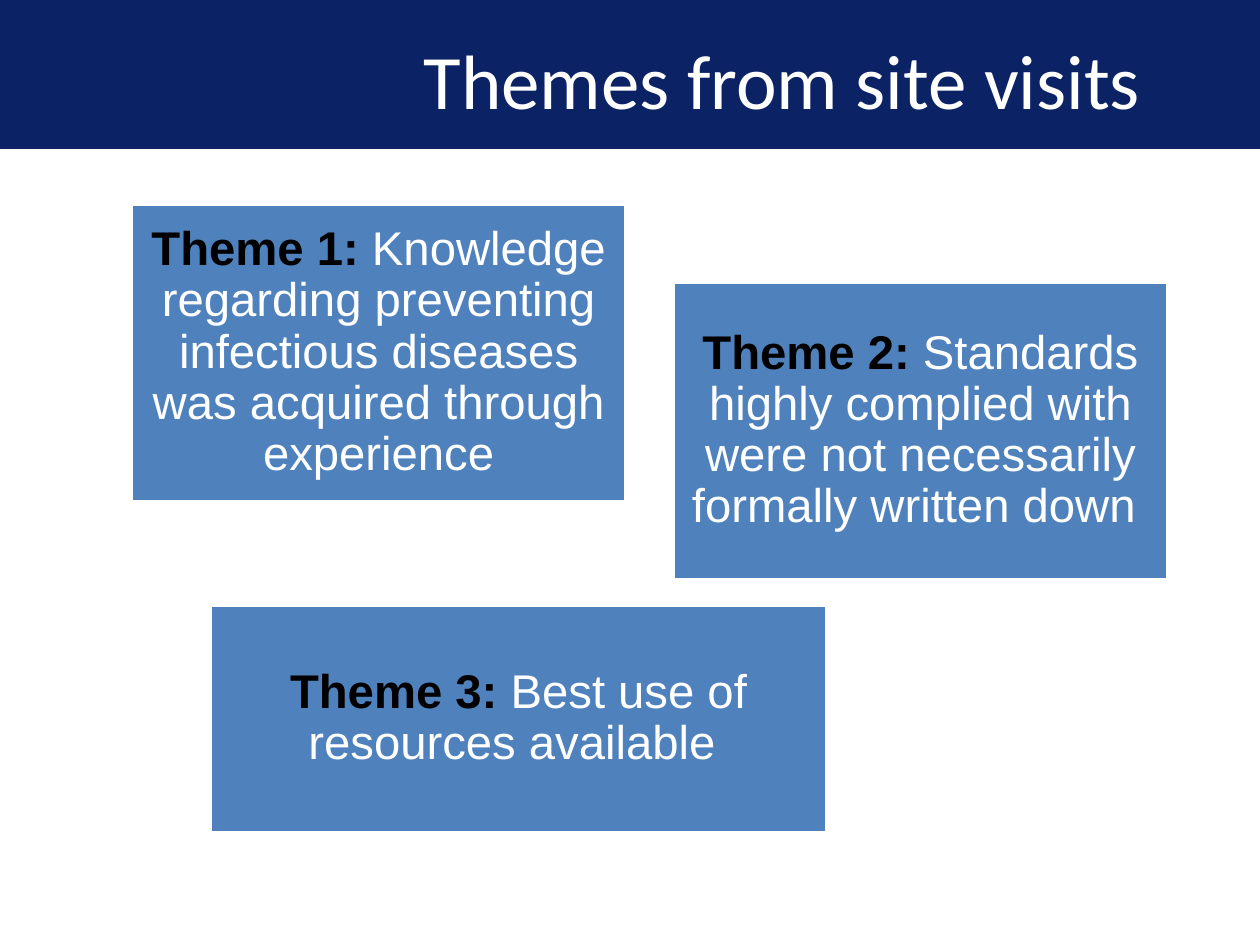
from dataclasses import dataclass

from pptx import Presentation
from pptx.dml.color import RGBColor
from pptx.enum.shapes import MSO_SHAPE
from pptx.enum.text import MSO_ANCHOR, PP_ALIGN
from pptx.util import Inches, Pt

TITLE = "Themes from site visits"
THEMES = [
    ("Theme 1: ", "Knowledge regarding preventing infectious diseases was acquired through experience",
     (1.04, 1.62, 3.93, 2.36)),
    ("Theme 2: ", "Standards highly complied with were not necessarily formally written down ",
     (5.34, 2.24, 3.93, 2.36)),
    ("Theme 3: ", "Best use of resources available ",
     (1.67, 4.8, 4.89, 1.81)),
]


@dataclass(frozen=True)
class Theme:
    navy: str = "0B2265"
    blue: str = "4F81BD"
    white: str = "FFFFFF"
    black: str = "000000"
    title_font: str = "Calibri"
    body_font: str = "Arial"
    title_size: int = 44
    body_size: int = 27
    line_width: int = 2


THEME = Theme()


def add_panel(page, bounds, fill, line):
    panel = page.shapes.add_shape(MSO_SHAPE.RECTANGLE, *map(Inches, bounds))
    panel.shadow.inherit = False
    panel.fill.solid()
    panel.fill.fore_color.rgb = RGBColor.from_string(fill)
    panel.line.color.rgb = RGBColor.from_string(line)
    panel.line.width = Pt(THEME.line_width)
    return panel


def set_up_frame(box, horizontal, vertical, spacing=1.0):
    frame = box.text_frame
    frame.word_wrap = True
    frame.vertical_anchor = MSO_ANCHOR.MIDDLE
    frame.margin_left = frame.margin_right = Inches(horizontal)
    frame.margin_top = frame.margin_bottom = Inches(vertical)
    para = frame.paragraphs[0]
    para.alignment = PP_ALIGN.CENTER
    para.line_spacing = spacing
    return para


def add_text(para, text, *, font, size, color, bold=False):
    span = para.add_run()
    span.text = text
    span.font.name = font
    span.font.size = Pt(size)
    span.font.bold = bold
    span.font.color.rgb = RGBColor.from_string(color)


def add_title(page):
    band = add_panel(page, (0, 0, 10, 1.17), THEME.navy, THEME.navy)
    title = page.shapes.title
    title._element.addprevious(band._element)
    title.left, title.top, title.width, title.height = map(Inches, (2.42, 0, 7.58, 1.25))
    para = set_up_frame(title, 0.1, 0.05)
    add_text(para, TITLE, font=THEME.title_font, size=THEME.title_size, color=THEME.white)


def add_theme_box(page, label, text, bounds):
    box = add_panel(page, bounds, THEME.blue, THEME.white)
    para = set_up_frame(box, 0.11, 0.11, spacing=0.9)
    body = {"font": THEME.body_font, "size": THEME.body_size}
    add_text(para, label, color=THEME.black, bold=True, **body)
    add_text(para, text, color=THEME.white, **body)


def main():
    deck = Presentation()
    deck.slide_width, deck.slide_height = Inches(10), Inches(7.5)
    page = deck.slides.add_slide(deck.slide_layouts[5])
    add_title(page)
    for label, text, bounds in THEMES:
        add_theme_box(page, label, text, bounds)
    deck.save("out.pptx")


if __name__ == "__main__":
    main()
